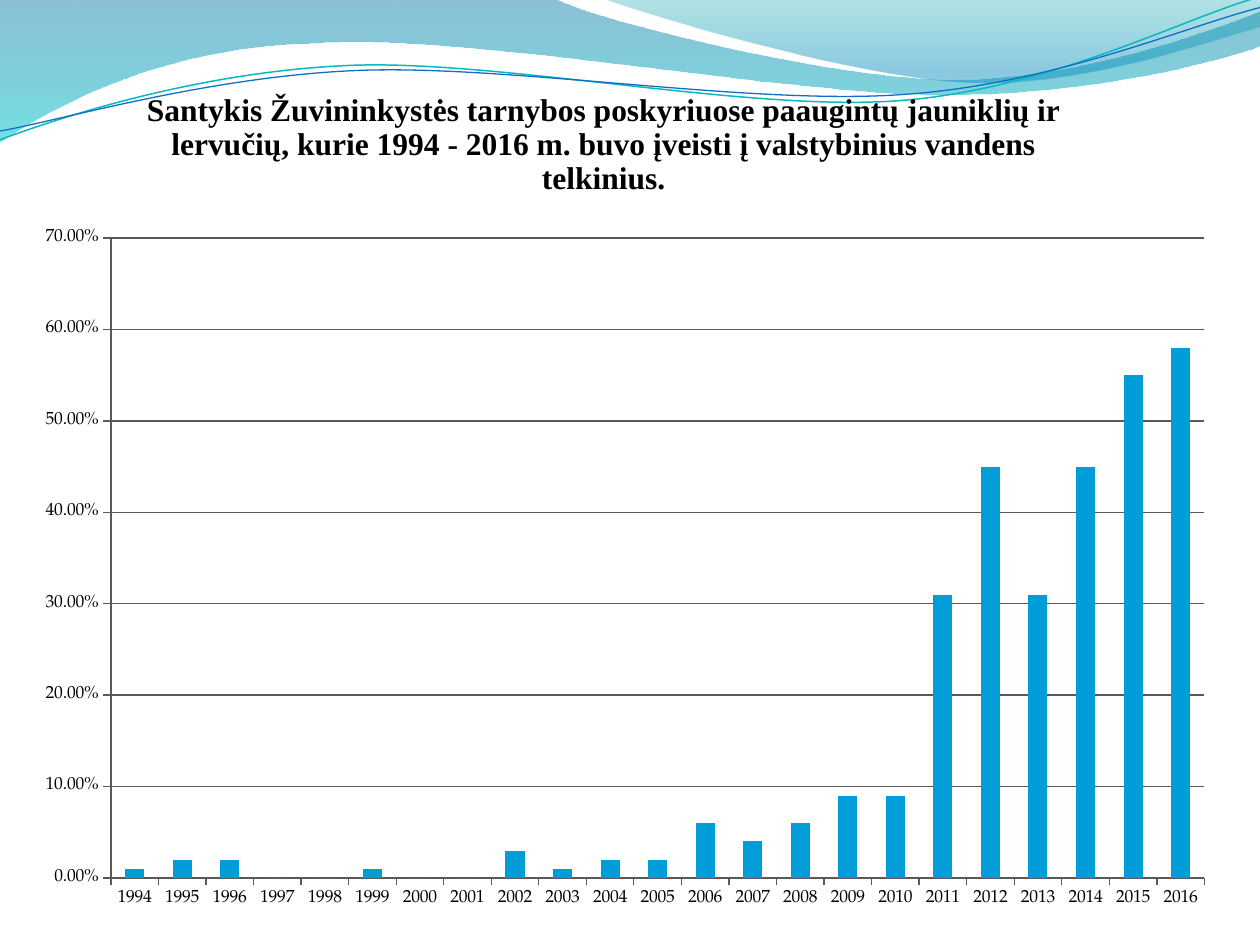
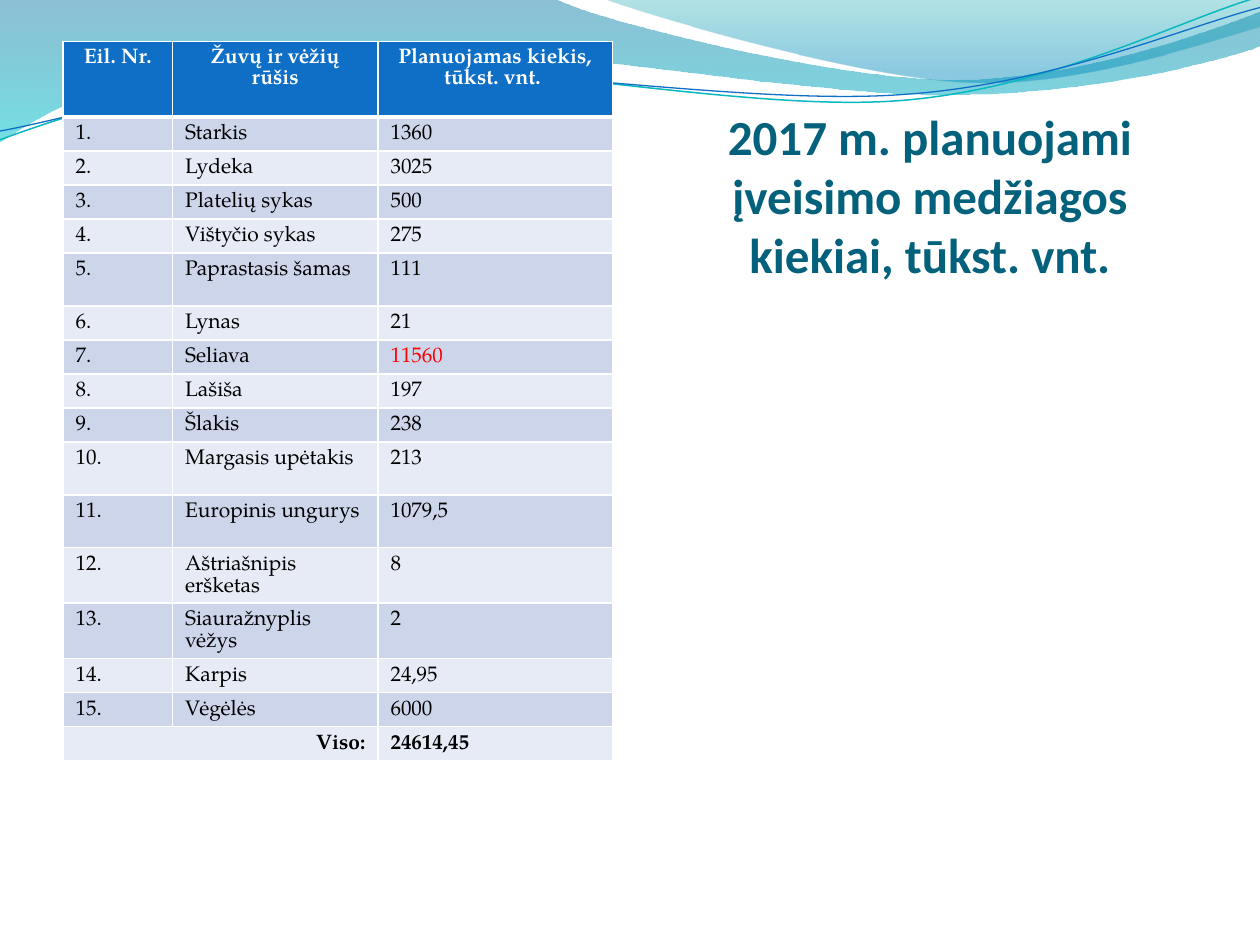
"""Builds two slides on fish stocking: a yearly share chart and the 2017 plan table."""
from dataclasses import dataclass

from lxml.etree import SubElement
from pptx import Presentation
from pptx.chart.data import CategoryChartData
from pptx.dml.color import RGBColor
from pptx.enum.chart import XL_CHART_TYPE as ChartType, XL_TICK_MARK as Tick
from pptx.enum.text import MSO_ANCHOR as Anchor, MSO_AUTO_SIZE as AutoSize, PP_ALIGN as Align
from pptx.oxml.ns import qn
from pptx.util import Inches, Pt

CHART_TITLE = ("Santykis Žuvininkystės tarnybos poskyriuose paaugintų jauniklių ir lervučių, "
               "kurie 1994 - 2016 m. buvo įveisti į valstybinius vandens telkinius.")
FIRST_YEAR = 1994
SHARES = [0.01, 0.02, 0.02, 0, 0, 0.01, 0, 0, 0.03, 0.01, 0.02, 0.02,
          0.06, 0.04, 0.06, 0.09, 0.09, 0.31, 0.45, 0.31, 0.45, 0.55, 0.58]
CHART_BOX = (0.17, 0.58, 9.58, 6.75)

PLAN_TITLE = "2017 m. planuojami įveisimo medžiagos kiekiai, tūkst. vnt."
PLAN_HEADER = ("Eil. Nr.", "Žuvų ir vėžių rūšis", "Planuojamas kiekis, tūkst. vnt. ")
PLAN = [
    ("Starkis", "1360"), ("Lydeka", "3025"), ("Platelių sykas", "500"),
    ("Vištyčio sykas", "275"), ("Paprastasis šamas", "111"), ("Lynas", "21"),
    ("Seliava", "11560"), ("Lašiša", "197"), ("Šlakis", "238"),
    ("Margasis upėtakis", "213"), ("Europinis ungurys", "1079,5"),
    ("Aštriašnipis eršketas", "8"), ("Siauražnyplis vėžys", "2"),
    ("Karpis", "24,95"), ("Vėgėlės", "6000"),
]
PLAN_TOTAL = ("Viso:", "", "24614,45")
HIGHLIGHTED = "11560"
COLUMN_WIDTHS = (0.87, 1.63, 1.86)
HEADER_HEIGHT, ROW_HEIGHT, TALL_HEIGHT = 0.6, 0.27, 0.42
TALL_ROWS = {5, 10, 11, 12, 13}

BANDS = [
    (((0, "0074A1", 45), (1, "00C6CF", 55)), (0, 0), [
        (4.4, -0.01), (4.76, 0.17, 6.64, 0.63, 7.58, 0.63), (8.53, 0.63, 9.58, 0.26, 10, 0.09),
        (10.01, 0.36), (9.83, 0.44, 8.7, 0.76, 7.46, 0.75), (6.22, 0.75, 3.82, 0.28, 2.57, 0.34),
        (1.29, 0.36, 0.46, 0.83, -0.01, 1.13), (0, 0)]),
    (((0, "00A1A9", 30), (0.8, "008BBF", 45)), (4.79, -0.01), [
        (5.09, 0.11, 6.82, 0.62, 7.69, 0.65), (8.56, 0.69, 9.61, 0.32, 10, 0.21), (10, 0),
        (4.79, -0.01)]),
]
WAVES = [
    ("0AB8BF", 0.85, (0, 1.11), [
        (0.48, 0.93, 1.58, 0.57, 2.77, 0.52), (3.95, 0.47, 5.93, 0.89, 7.13, 0.8),
        (8.33, 0.71, 9.38, 0.15, 9.98, -0.02)]),
    ("0F6FC6", 0.75, (0, 1.04), [
        (0.47, 0.96, 1.64, 0.61, 2.83, 0.56), (4.03, 0.51, 5.97, 0.84, 7.17, 0.75),
        (8.36, 0.67, 9.41, 0.21, 10, 0.06)]),
]


@dataclass(frozen=True)
class Theme:
    """Colours, fonts and type sizes of the deck."""
    body_font: str = "TeX Gyre Pagella"
    chart_title_font: str = "Times New Roman"
    title_font: str = "Calibri"
    title_size: int = 28
    chart_title_size: int = 18
    table_size: int = 12
    header_leading: float = 12
    table_leading: float = 12.6
    chart_size: int = 10
    title: str = "04617B"
    text: str = "000000"
    white: str = "FFFFFF"
    alert: str = "FF0000"
    header: str = "0F6FC6"
    stripes: tuple = ("E7EBF5", "CCD5EA")
    bar: str = "009DD9"
    grid: str = "595959"


THEME = Theme()


def rgb(code):
    """Turns a hex code into a colour."""
    return RGBColor.from_string(code)


def set_font(font, name, size, color, bold=False):
    """Formats a font in one go."""
    font.name, font.size, font.bold = name, Pt(size), bold
    font.color.rgb = rgb(color)


def draw_outline(page, start, segments, close):
    """Draws a freeform of lines and cubic curves without shadow."""
    points = [(Inches(x), Inches(y)) for segment in [start, *segments]
              for x, y in zip(segment[::2], segment[1::2])]
    builder = page.shapes.build_freeform(*points[0])
    builder.add_line_segments(points[1:], close=close)
    shape = builder.convert_to_shape()
    shape.shadow.inherit = False
    lines = iter(list(shape.element.iter(qn("a:lnTo"))))
    for segment in segments:
        group = [next(lines) for _ in segment[::2]]
        if len(group) == 3:
            outline = group[0].getparent()
            curve = SubElement(outline, qn("a:cubicBezTo"))
            group[0].addprevious(curve)
            for line in group:
                curve.append(line[0])
                outline.remove(line)
    return shape


def decorate_master(deck, page):
    """Draws the bands and waves and moves them behind everything on the master."""
    shapes = []
    for stops, start, segments in BANDS:
        band = draw_outline(page, start, segments, True)
        band.line.fill.background()
        band.fill.gradient()
        band.fill.gradient_angle = 270
        for stop, (position, color, _) in zip(band.fill.gradient_stops, stops):
            stop.position, stop.color.rgb = position, rgb(color)
        tints = band.element.spPr.iter(qn("a:srgbClr"))
        for tint, (_, _, opacity) in zip(list(tints), stops):
            SubElement(tint, qn("a:alpha"), val=str(opacity * 1000))
        shapes.append(band)
    for color, width, start, segments in WAVES:
        wave = draw_outline(page, start, segments, False)
        wave.fill.background()
        wave.line.color.rgb, wave.line.width = rgb(color), Pt(width)
        shapes.append(wave)
    for index, shape in enumerate(shapes):
        shape.element.nvSpPr.cNvPr.set("id", str(100 + index))
        deck.slide_master.shapes.element.insert(2 + index, shape.element)


def place_in_chart(part, left, top, size=()):
    """Fixes a chart part at inches from the chart's corner."""
    layout = part.find(qn("c:layout"))
    if layout is None:
        layout = SubElement(part, qn("c:layout"))
        part.insert(0, layout)
    manual = SubElement(layout, qn("c:manualLayout"))
    values = {"layoutTarget": "inner"} if size else {}
    values.update(xMode="edge", yMode="edge")
    for index, (name, length) in enumerate(zip("xywh", (left, top, *size))):
        values[name] = length / CHART_BOX[2 + index % 2]
    for name, value in values.items():
        SubElement(manual, qn(f"c:{name}"), val=str(value))


def add_share_chart(page):
    """Adds the column chart of yearly shares."""
    data = CategoryChartData(number_format="0.00%")
    data.categories = [str(FIRST_YEAR + index) for index in range(len(SHARES))]
    data.add_series("Series 1", SHARES)
    frame = page.shapes.add_chart(ChartType.COLUMN_CLUSTERED, *map(Inches, CHART_BOX), data)
    chart = frame.chart
    chart.has_legend = False
    set_font(chart.font, THEME.body_font, THEME.chart_size, THEME.text)

    chart.has_title = True
    para = chart.chart_title.text_frame.paragraphs[0]
    para.text = CHART_TITLE
    set_font(para.font, THEME.chart_title_font, THEME.chart_title_size, THEME.text, True)
    place_in_chart(chart.chart_title.element, 0.95, 0.09)
    place_in_chart(chart.element.find(".//" + qn("c:plotArea")), 0.71, 1.31, (8.68, 5.08))

    plot = chart.plots[0]
    plot.gap_width, plot.vary_by_categories = 150, False
    fill = plot.series[0].format.fill
    fill.solid()
    fill.fore_color.rgb = rgb(THEME.bar)

    values = chart.value_axis
    values.minimum_scale, values.maximum_scale, values.major_unit = 0, 0.7, 0.1
    values.has_major_gridlines = True
    values.tick_labels.number_format = "0.00%"
    values.tick_labels.number_format_is_linked = False
    for axis in (values, chart.category_axis):
        axis.major_tick_mark = Tick.OUTSIDE
    for part in (values, chart.category_axis, values.major_gridlines):
        part.format.line.color.rgb = rgb(THEME.grid)
        part.format.line.width = Pt(0.75)


def add_title(page):
    """Moves and formats the title placeholder."""
    box = page.shapes.title
    box.left, box.top, box.width, box.height = map(Inches, (5.42, 1.17, 3.92, 1.08))
    frame = box.text_frame
    frame.text = PLAN_TITLE
    frame.auto_size, frame.word_wrap = AutoSize.NONE, True
    frame.vertical_anchor = Anchor.BOTTOM
    frame.margin_left = frame.margin_right = frame.margin_bottom = 0
    frame.margin_top = Inches(0.05)
    para = frame.paragraphs[0]
    para.alignment = Align.CENTER
    set_font(para.font, THEME.title_font, THEME.title_size, THEME.title, True)


def set_borders(cell, bottom):
    """Gives a cell white borders, the fill staying last."""
    properties = cell._tc.get_or_add_tcPr()
    for index, (side, width) in enumerate((("L", 1), ("R", 1), ("T", 1), ("B", bottom))):
        line = SubElement(properties, qn(f"a:ln{side}"), w=str(Pt(width)))
        SubElement(SubElement(line, qn("a:solidFill")), qn("a:srgbClr"), val=THEME.white)
        properties.insert(index, line)


def format_cell(cell, text, fill, color, bold, align, leading):
    """Writes and formats one table cell."""
    cell.margin_left = cell.margin_right = Inches(0.1)
    cell.margin_top, cell.margin_bottom = Inches(0.05), Inches(0.04)
    cell.fill.solid()
    cell.fill.fore_color.rgb = rgb(fill)
    para = cell.text_frame.paragraphs[0]
    if text:
        para.text = text
    para.alignment, para.line_spacing = align, Pt(leading)
    set_font(para.font, THEME.body_font, THEME.table_size, color, bold)


def add_plan_table(page):
    """Adds the table of planned quantities."""
    numbered = [(f"{number}.", *entry) for number, entry in enumerate(PLAN, 1)]
    rows = [PLAN_HEADER, *numbered, PLAN_TOTAL]
    last = len(rows) - 1
    heights = [HEADER_HEIGHT] + [TALL_HEIGHT if index in TALL_ROWS else ROW_HEIGHT
                                 for index in range(1, len(rows))]
    table = page.shapes.add_table(len(rows), len(COLUMN_WIDTHS), Inches(0.5), Inches(0.33),
                                  Inches(sum(COLUMN_WIDTHS)), Inches(sum(heights))).table
    for column, width in zip(table.columns, COLUMN_WIDTHS):
        column.width = Inches(width)
    for index, (texts, height) in enumerate(zip(rows, heights)):
        table.rows[index].height = Inches(height)
        header = index == 0
        fill = THEME.header if header else THEME.stripes[index % 2]
        leading = THEME.header_leading if header else THEME.table_leading
        for position, text in enumerate(texts):
            color = THEME.white if header else THEME.alert if text == HIGHLIGHTED else THEME.text
            align = (Align.CENTER if header else
                     Align.RIGHT if index == last and position == 0 else Align.LEFT)
            cell = table.cell(index, position)
            format_cell(cell, text, fill, color, index in (0, last), align, leading)
            set_borders(cell, 3 if header else 1)
    table.cell(last, 0).merge(table.cell(last, 1))


def main():
    """Builds and saves the deck."""
    deck = Presentation()
    deck.slide_width, deck.slide_height = Inches(10), Inches(7.5)
    title_only, blank = deck.slide_layouts[5], deck.slide_layouts[6]
    chart_page = deck.slides.add_slide(blank)
    decorate_master(deck, chart_page)
    add_share_chart(chart_page)
    plan_page = deck.slides.add_slide(title_only)
    add_title(plan_page)
    add_plan_table(plan_page)
    deck.save("out.pptx")


if __name__ == "__main__":
    main()
